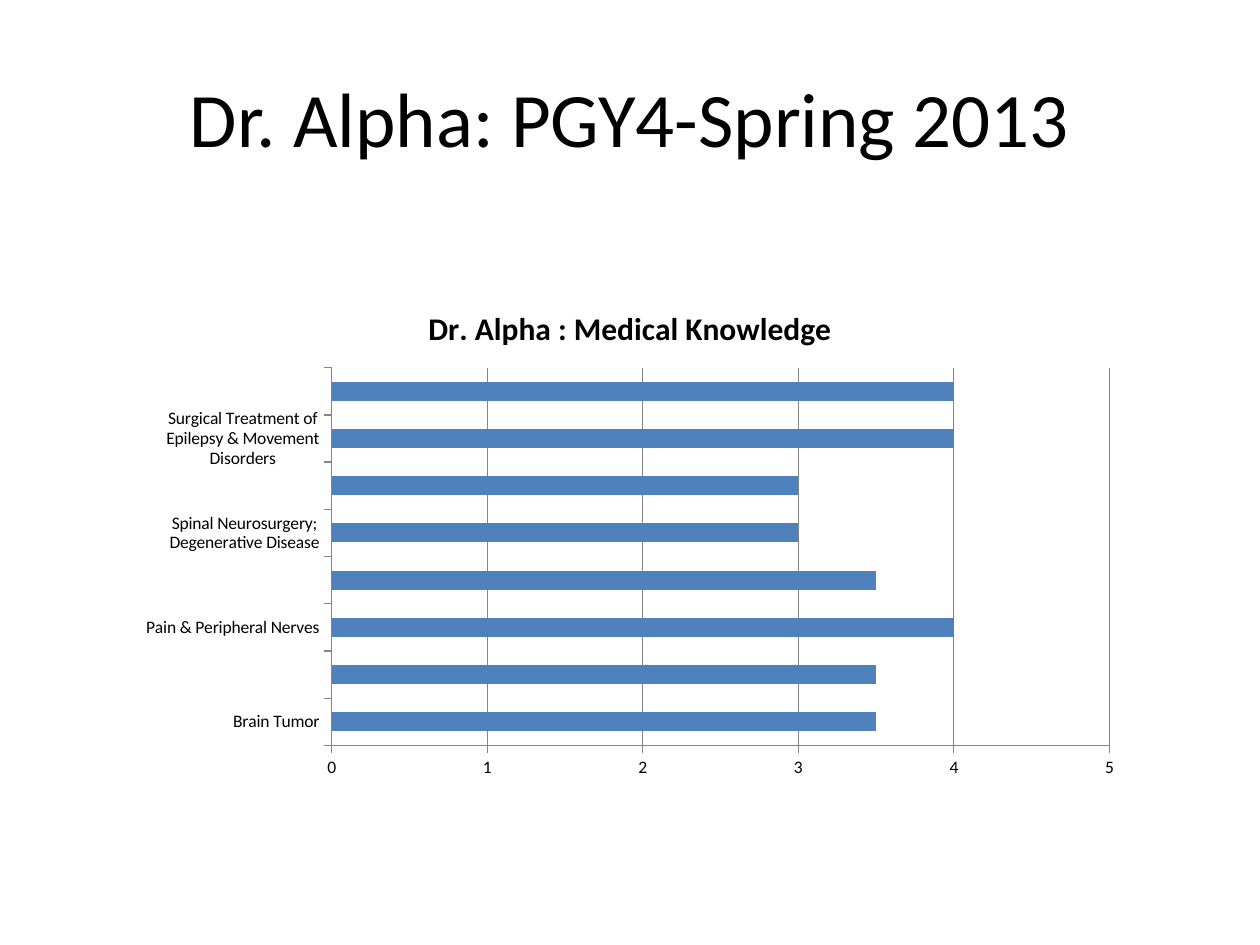
from pptx import Presentation
from pptx import util as u
from pptx.chart.data import CategoryChartData
from pptx.dml.color import RGBColor
from pptx.enum import chart as ch, text

HEADING = "Dr. Alpha: PGY4-Spring 2013"
CHART_TITLE = "Dr. Alpha : Medical Knowledge"
SCORES = [
    ("Brain Tumor", 3.5),
    ("", 3.5),
    ("Pain & Peripheral Nerves", 4),
    ("", 3.5),
    ("Spinal Neurosurgery; Degenerative Disease", 3),
    ("", 3),
    ("Surgical Treatment of Epilepsy & Movement Disorders", 4),
    ("", 4),
]
COLORS = {"text": "000000", "bar": "4F81BD", "axis": "868686"}
FONT = "Calibri"


def color(key):
    return RGBColor.from_string(COLORS[key])


def set_font(font, size, bold=False):
    font.name, font.size, font.bold = FONT, u.Pt(size), bold
    font.color.rgb = color("text")


def set_line(line):
    line.color.rgb = color("axis")
    line.width = u.Pt(0.75)


deck = Presentation()
deck.slide_width, deck.slide_height = u.Cm(25.4), u.Cm(19.05)
slide = deck.slides.add_slide(deck.slide_layouts[6])

heading = slide.shapes.add_textbox(u.Cm(1.27), u.Cm(0.76), u.Cm(22.86), u.Cm(3.18)).text_frame
heading.word_wrap = True
heading.vertical_anchor = text.MSO_ANCHOR.MIDDLE
heading_line = heading.paragraphs[0]
heading_line.text = HEADING
heading_line.alignment = text.PP_ALIGN.CENTER
set_font(heading_line.font, 44)

score_data = CategoryChartData(number_format="General")
score_data.categories = [topic for topic, _ in SCORES]
score_data.add_series(CHART_TITLE, [score for _, score in SCORES])
knowledge = slide.shapes.add_chart(
    ch.XL_CHART_TYPE.BAR_CLUSTERED,
    u.Cm(2.54), u.Cm(5.72), u.Cm(20.32), u.Cm(10.16), score_data,
).chart
set_font(knowledge.font, 10)
knowledge.has_legend = False
knowledge.has_title = True
chart_title = knowledge.chart_title
chart_title.include_in_layout = False
title_line = chart_title.text_frame.paragraphs[0]
title_line.text = CHART_TITLE
set_font(title_line.font, 18, bold=True)

bars = knowledge.plots[0]
bars.gap_width = 150
bars.vary_by_categories = False
bar_fill = bars.series[0].format.fill
bar_fill.solid()
bar_fill.fore_color.rgb = color("bar")

topics, scale = knowledge.category_axis, knowledge.value_axis
for axis in (topics, scale):
    axis.major_tick_mark = ch.XL_TICK_MARK.OUTSIDE
    axis.minor_tick_mark = ch.XL_TICK_MARK.NONE
    set_line(axis.format.line)
topics.has_major_gridlines = False
scale.has_major_gridlines = True
set_line(scale.major_gridlines.format.line)
scale.minimum_scale, scale.maximum_scale, scale.major_unit = 0, 5, 1
scale.tick_labels.number_format = "0"
scale.tick_labels.number_format_is_linked = False

deck.save("out.pptx")
